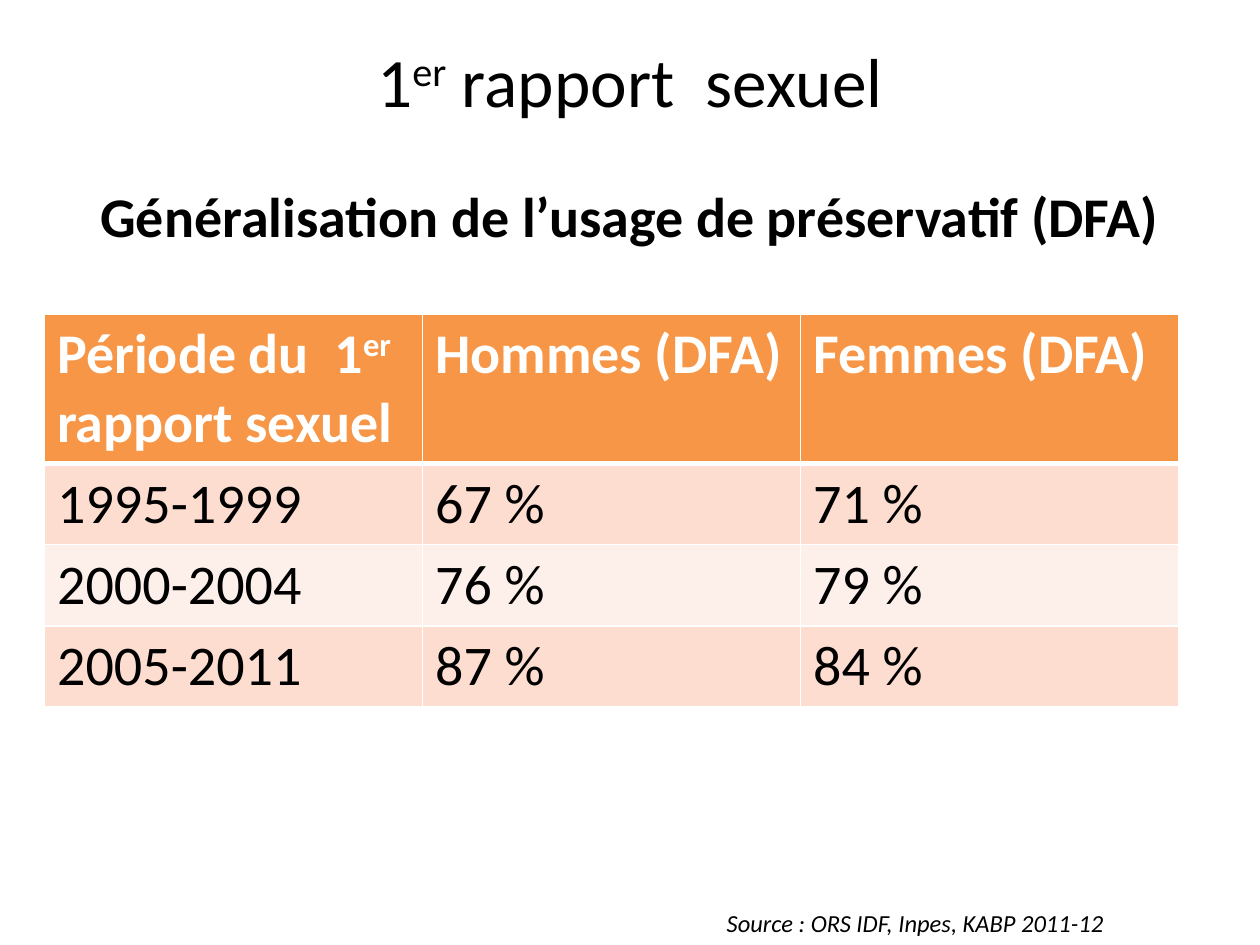
from lxml import etree
from pptx import Presentation
from pptx.dml.color import RGBColor
from pptx.enum.text import MSO_ANCHOR, MSO_AUTO_SIZE, PP_ALIGN
from pptx.oxml.ns import qn
from pptx.util import Cm, Pt

CENTER, LEFT = PP_ALIGN.CENTER, PP_ALIGN.LEFT
TOP = MSO_ANCHOR.TOP
FIXED_SIZE = MSO_AUTO_SIZE.NONE
TITLE_ONLY = 5

BLACK = RGBColor(0x00, 0x00, 0x00)
WHITE = RGBColor(0xFF, 0xFF, 0xFF)
ORANGE = RGBColor(0xF7, 0x96, 0x46)
BANDS = (RGBColor(0xFC, 0xDD, 0xCF), RGBColor(0xFD, 0xEF, 0xE9))

FONT = "Calibri"
TITLE_FORMAT = {"size": Pt(39.6), "bold": False}
SUBTITLE_FORMAT = {"size": Pt(32), "bold": True}
HEADER_FORMAT = {"size": Pt(32), "bold": True}
BODY_FORMAT = {"size": Pt(32), "bold": False}
SOURCE_FORMAT = {"size": Pt(14), "italic": True}

TITLE = ("1", "er", " rapport  sexuel")
HEADERS = (
    ("Période du  1", "er", " rapport sexuel"),
    ("Hommes (DFA)",),
    ("Femmes (DFA)",),
)
CONDOM_USE = (
    ("1995-1999", "67 %", "71 %"),
    ("2000-2004", "76 %", "79 %"),
    ("2005-2011", "87 %", "84 %"),
)


def write_text(frame, parts, text_format, color=BLACK, align=LEFT):
    """Write one paragraph; every second part is superscript."""
    paragraph = frame.paragraphs[0]
    paragraph.alignment = align
    for index, part in enumerate(parts):
        run = paragraph.add_run()
        run.text = part
        run.font.name = FONT
        run.font.color.rgb = color
        for attribute, value in text_format.items():
            setattr(run.font, attribute, value)
        if index % 2:
            run.font._element.set("baseline", "30000")


def add_title(slide):
    title = slide.shapes.title
    title.left, title.top = Cm(1.27), Cm(0.76)
    title.width, title.height = Cm(22.86), Cm(3.18)
    frame = title.text_frame
    frame.auto_size = FIXED_SIZE
    frame.vertical_anchor = TOP
    frame.margin_top = 0
    write_text(frame, TITLE, TITLE_FORMAT, align=CENTER)


def add_text(slide, box, text, text_format, align=LEFT):
    frame = slide.shapes.add_textbox(*box).text_frame
    frame.word_wrap = True
    write_text(frame, (text,), text_format, align=align)


def set_borders(cell, **widths):
    """Draw white borders; widths in points are keyed by L, R, T and B."""
    properties = cell._tc.get_or_add_tcPr()
    for side, width in widths.items():
        line = etree.SubElement(properties, qn(f"a:ln{side}"), w=str(Pt(width)))
        fill = etree.SubElement(line, qn("a:solidFill"))
        etree.SubElement(fill, qn("a:srgbClr"), val=str(WHITE))


def fill_cell(cell, parts, text_format, color, background, top, bottom):
    write_text(cell.text_frame, parts, text_format, color)
    set_borders(cell, L=1, R=1, T=top, B=bottom)
    cell.fill.solid()
    cell.fill.fore_color.rgb = background


def add_condom_use_table(slide):
    table = slide.shapes.add_table(
        len(CONDOM_USE) + 1, len(HEADERS), Cm(0.9), Cm(6.33), Cm(22.86), Cm(7.87)
    ).table
    for row in table.rows:
        row.height = Cm(1.63)
    table.rows[0].height = Cm(2.98)

    for column, parts in enumerate(HEADERS):
        fill_cell(table.cell(0, column), parts, HEADER_FORMAT, WHITE, ORANGE, 1, 3)
    for index, values in enumerate(CONDOM_USE):
        top = 1 if index else 3
        for column, value in enumerate(values):
            fill_cell(table.cell(index + 1, column), (value,), BODY_FORMAT,
                      BLACK, BANDS[index % 2], top, 1)


def main():
    presentation = Presentation()
    presentation.slide_width, presentation.slide_height = Cm(25.4), Cm(19.05)
    slide = presentation.slides.add_slide(presentation.slide_layouts[TITLE_ONLY])
    add_title(slide)
    add_condom_use_table(slide)
    add_text(slide, (Cm(0), Cm(3.53), Cm(25.4), Cm(1.63)),
             "Généralisation de l’usage de préservatif (DFA)", SUBTITLE_FORMAT, CENTER)
    add_text(slide, (Cm(14.4), Cm(18.19), Cm(11), Cm(0.86)),
             "Source : ORS IDF, Inpes, KABP 2011-12", SOURCE_FORMAT)
    presentation.save("out.pptx")


if __name__ == "__main__":
    main()
